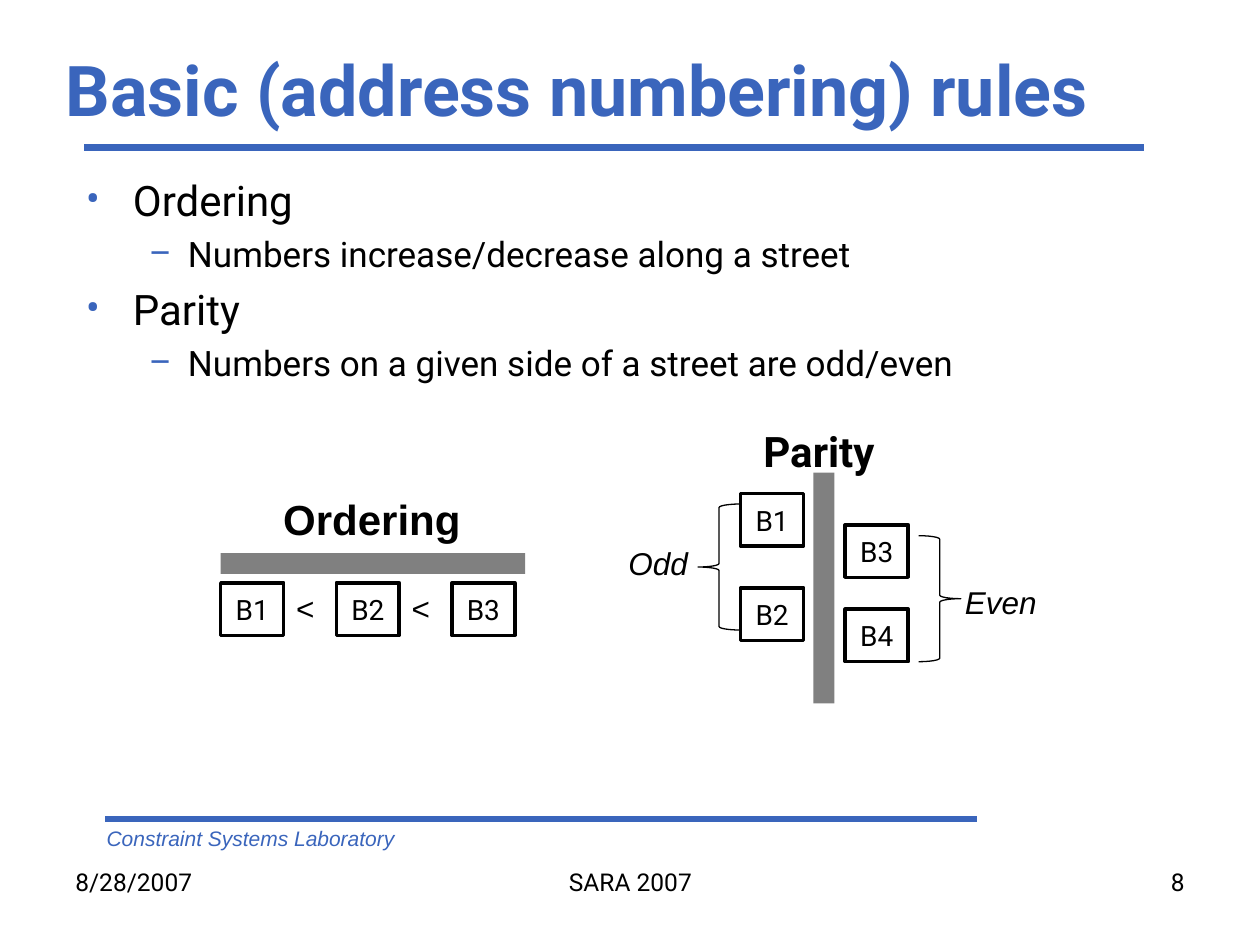
"""Build the slide on basic address numbering rules."""
from typing import NamedTuple

import lxml.etree
import pptx
import pptx.dml.color
import pptx.enum.shapes
import pptx.enum.text
import pptx.oxml.ns
import pptx.util

Cm, Pt = pptx.util.Cm, pptx.util.Pt
SHAPE = pptx.enum.shapes.MSO_SHAPE
ALIGN = pptx.enum.text.PP_ALIGN
ANCHOR = pptx.enum.text.MSO_ANCHOR
qn = pptx.oxml.ns.qn
BLUE, BLACK, WHITE, GRAY = "3A65BC", "000000", "FFFFFF", "808080"
BOX_W, BOX_H = 1.27, 1.06


class Label(NamedTuple):
    text: str
    x: float
    y: float
    w: float
    h: float
    size: int
    font: str = "Arial"
    bold: bool = False
    italic: bool = False
    color: str = BLACK
    align: ALIGN = ALIGN.LEFT
    wrap: bool = True


class Building(NamedTuple):
    name: str
    x: float
    y: float


class Bullet(NamedTuple):
    text: str
    level: int


class Style(NamedTuple):
    mark: str
    indent: float
    hanging: float
    size: int
    before: float


STYLES = [Style("•", 0.95, 0.95, 24, 5), Style("–", 2.06, 0.79, 20, 4.5)]
BULLETS = [
    Bullet("Ordering", 0),
    Bullet("Numbers increase/decrease along a street", 1),
    Bullet("Parity", 0),
    Bullet("Numbers on a given side of a street are odd/even", 1),
]
ROW_X, ROW_Y, ROW_STEP = 4.45, 11.75, 2.33
ORDERED = [Building(f"B{i + 1}", ROW_X + i * ROW_STEP, ROW_Y) for i in range(3)]
SIDES = [
    Building("B1", 14.93, 9.95),
    Building("B2", 14.93, 11.85),
    Building("B3", 17.04, 10.58),
    Building("B4", 17.04, 12.28),
]
ORDER_LABELS = [Label("Ordering", 5.46, 9.83, 4.09, 1.27, 24, bold=True, wrap=False)] + [
    Label("<", ROW_X + BOX_W + i * ROW_STEP, ROW_Y, 0.9, 1.02, 18, wrap=False)
    for i in range(2)
]
PARITY_LABELS = [
    Label("Odd", 12.42, 10.85, 1.7, 1.02, 18, italic=True),
    Label("Even", 19.2, 11.63, 1.96, 1.02, 18, italic=True, wrap=False),
    Label("Parity", 15.14, 8.46, 2.87, 1.27, 24, "Roboto", bold=True, wrap=False),
]
FOOTERS = [
    Label("Constraint Systems Laboratory", 1.9, 16.51, 13.34, 0.76, 12, italic=True, color=BLUE),
    Label("8/28/2007", 1.27, 17.35, 5.92, 1.32, 14, "Roboto"),
    Label("8", 18.21, 17.35, 5.92, 1.32, 14, "Roboto", align=ALIGN.RIGHT),
    Label("SARA 2007", 8.69, 17.35, 8.04, 1.32, 14, "Roboto", align=ALIGN.CENTER),
]


def rgb(color: str) -> pptx.dml.color.RGBColor:
    return pptx.dml.color.RGBColor.from_string(color)


def lengths(*values: float) -> list:
    return [Cm(v) for v in values]


def format_font(font, name: str, size: int, color: str, bold=False, italic=False) -> None:
    font.name, font.size, font.bold, font.italic = name, Pt(size), bold, italic
    font.color.rgb = rgb(color)


def add_label(shapes, label: Label) -> None:
    sp = shapes.add_textbox(*lengths(label.x, label.y, label.w, label.h))
    tf = sp.text_frame
    tf.word_wrap = label.wrap
    tf.text = label.text
    p = tf.paragraphs[0]
    p.alignment = label.align
    format_font(p.runs[0].font, label.font, label.size, label.color, label.bold, label.italic)


def add_rect(shapes, x: float, y: float, w: float, h: float, fill: str):
    sp = shapes.add_shape(SHAPE.RECTANGLE, *lengths(x, y, w, h))
    sp.shadow.inherit = False
    sp.fill.solid()
    sp.fill.fore_color.rgb = rgb(fill)
    sp.line.fill.background()
    return sp


def add_building(shapes, building: Building) -> None:
    sp = add_rect(shapes, building.x, building.y, BOX_W, BOX_H, WHITE)
    sp.line.color.rgb = rgb(BLACK)
    sp.line.width = Pt(2)
    tf = sp.text_frame
    tf.vertical_anchor = ANCHOR.MIDDLE
    tf.word_wrap = False
    tf.text = building.name
    p = tf.paragraphs[0]
    p.alignment = ALIGN.CENTER
    format_font(p.runs[0].font, "Roboto", 16, BLACK)


def add_brace(shapes, x: float, y: float, rotation: int) -> None:
    sp = shapes.add_shape(SHAPE.RIGHT_BRACE, *lengths(x, y, 0.85, 2.54))
    sp.rotation = rotation
    sp.shadow.inherit = False
    sp.fill.background()
    sp.line.color.rgb = rgb(BLACK)
    sp.line.width = Pt(0.75)


def add_rule(shapes, x1: float, x2: float, y: float) -> None:
    line = shapes.add_connector(pptx.enum.shapes.MSO_CONNECTOR.STRAIGHT, *lengths(x1, y, x2, y))
    line.line.color.rgb = rgb(BLUE)
    line.line.width = Pt(4)
    lxml.etree.SubElement(line._element.spPr, qn("a:effectLst"))


def add_bullets(shapes, bullets: list[Bullet]) -> None:
    tf = shapes.add_textbox(*lengths(1.48, 3.39, 22.65, 5.92)).text_frame
    tf.word_wrap = True
    for i, bullet in enumerate(bullets):
        style = STYLES[bullet.level]
        p = tf.paragraphs[0] if i == 0 else tf.add_paragraph()
        p.text = bullet.text
        p.level = bullet.level
        if i:
            p.space_before = Pt(style.before)
        pPr = p._p.get_or_add_pPr()
        pPr.set("marL", str(Cm(style.indent)))
        pPr.set("indent", str(-Cm(style.hanging)))
        color = lxml.etree.SubElement(pPr, qn("a:buClr"))
        lxml.etree.SubElement(color, qn("a:srgbClr"), val=BLUE)
        lxml.etree.SubElement(pPr, qn("a:buFont"), typeface="Roboto")
        lxml.etree.SubElement(pPr, qn("a:buChar"), char=style.mark)
        format_font(p.runs[0].font, "Roboto", style.size, BLACK)


def set_title(sp, text: str) -> None:
    sp.left, sp.top, sp.width, sp.height = lengths(1.07, 0.84, 22.86, 1.9)
    tf = sp.text_frame
    tf.auto_size = pptx.enum.text.MSO_AUTO_SIZE.NONE
    tf.vertical_anchor = ANCHOR.MIDDLE
    tf.text = text
    p = tf.paragraphs[0]
    p.alignment = ALIGN.LEFT
    format_font(p.runs[0].font, "Roboto", 40, BLUE, bold=True)


def add_diagram(shapes, labels: list[Label], road: tuple, buildings: list[Building]):
    group = shapes.add_group_shape().shapes
    for label in labels:
        add_label(group, label)
    add_rect(group, *road, GRAY)
    for building in buildings:
        add_building(group, building)
    return group


def main() -> None:
    prs = pptx.Presentation()
    prs.slide_width, prs.slide_height = lengths(25.4, 19.05)
    s = prs.slides.add_slide(prs.slide_layouts[5])
    set_title(s.shapes.title, "Basic (address numbering) rules")
    add_rule(s.shapes, 1.7, 23.07, 2.97)
    add_rule(s.shapes, 2.12, 19.69, 16.51)
    add_bullets(s.shapes, BULLETS)
    add_diagram(s.shapes, ORDER_LABELS, (ROW_X, 11.15, 6.14, 0.42), ORDERED)
    parity = add_diagram(s.shapes, PARITY_LABELS, (16.4, 9.53, 0.42, 4.65), SIDES)
    add_brace(parity, 14.07, 10.16, 180)
    add_brace(parity, 18.52, 10.8, 0)
    for footer in FOOTERS:
        add_label(s.shapes, footer)
    prs.save("out.pptx")


if __name__ == "__main__":
    main()
